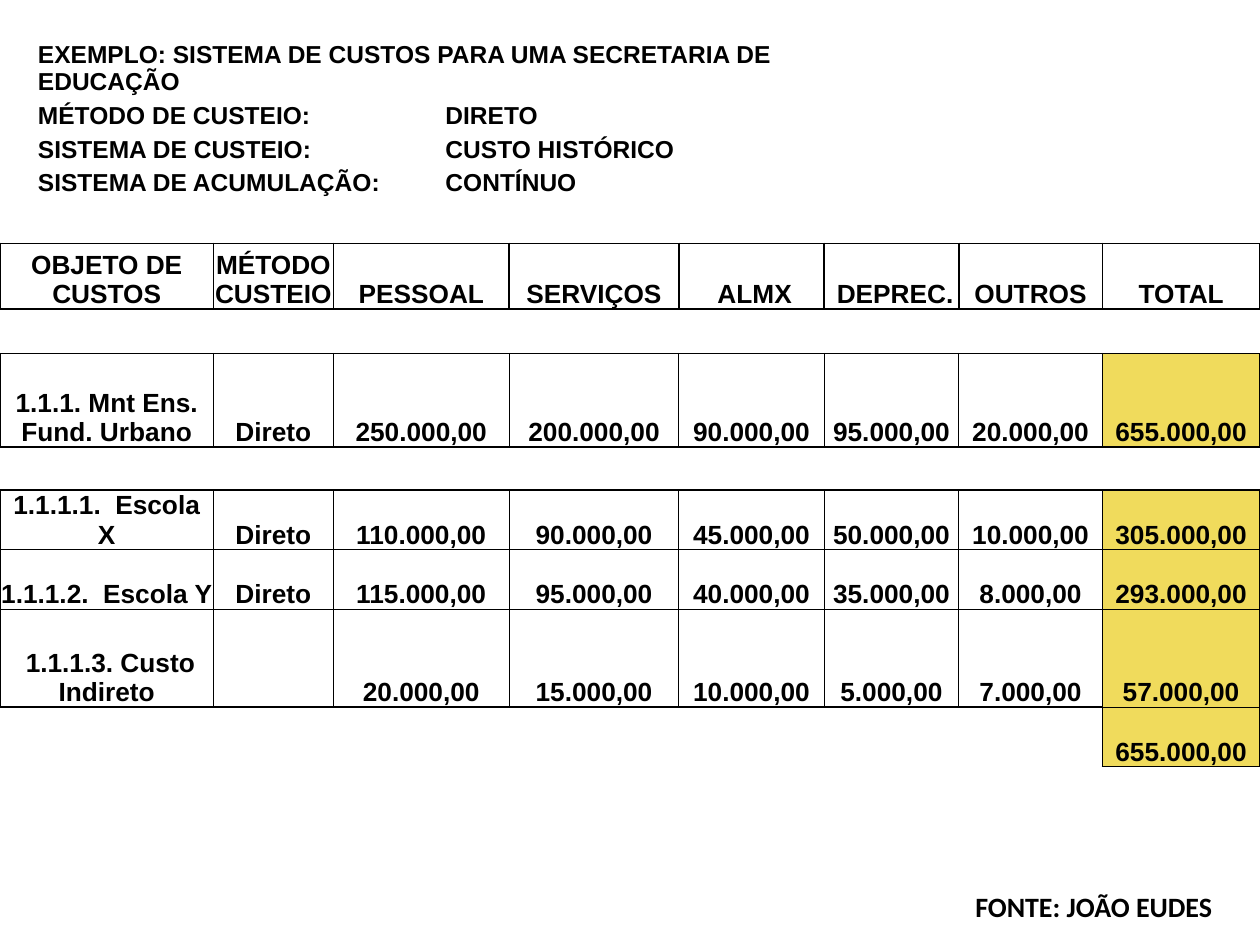
from lxml.etree import SubElement, Element
from pptx import Presentation
from pptx.dml.color import RGBColor
from pptx.enum.text import MSO_ANCHOR as Anchor, PP_ALIGN as Align
from pptx.oxml.ns import qn
from pptx.util import Pt

COLUMNS = [122, 68.5, 100.5, 97, 83, 77, 82, 90]
SIDES = {"a:lnL": (0, -1), "a:lnR": (0, 1), "a:lnT": (-1, 0), "a:lnB": (1, 0)}


def color(value):
    return RGBColor.from_string(value)


class Sheet:
    ink = "000000"
    highlight = "F0DB5C"
    cell_format = {
        "margin_left": Pt(0.7),
        "margin_right": Pt(0.7),
        "margin_top": Pt(0.7),
        "margin_bottom": 0,
        "vertical_anchor": Anchor.BOTTOM,
    }

    def __init__(self, page):
        self.page = page

    def fill_para(self, para, text, size, font="Arial", align=Align.LEFT):
        para.alignment = align
        if not text:
            SubElement(para._p, qn("a:endParaRPr"), sz=str(size * 100))
            return
        span = para.add_run()
        span.text = text
        style = {"name": font, "size": Pt(size), "bold": True}
        for key, value in style.items():
            setattr(span.font, key, value)
        span.font.color.rgb = color(self.ink)

    def border(self, cell, index, tag, weight):
        line = Element(qn(tag), w=str(Pt(weight)))
        if weight:
            fill = SubElement(line, qn("a:solidFill"))
            SubElement(fill, qn("a:srgbClr"), val=self.ink)
        else:
            SubElement(line, qn("a:noFill"))
        cell._tc.get_or_add_tcPr().insert(index, line)

    def table(self, left, top, widths, heights, rows, size=15,
              align=Align.CENTER, inner=0, total=False, merges=()):
        frame = self.page.shapes.add_table(
            len(rows), len(widths), Pt(left), Pt(top), Pt(sum(widths)), Pt(sum(heights)))
        grid = frame.table
        grid.first_row = grid.horz_banding = False
        for column, width in zip(grid.columns, widths):
            column.width = Pt(width)
        for row, height in zip(grid.rows, heights):
            row.height = Pt(height)
        boxed = {(r, c) for r, row in enumerate(rows)
                 for c, text in enumerate(row) if inner and text is not None}
        for r, row in enumerate(rows):
            for c, text in enumerate(row):
                cell = grid.cell(r, c)
                for key, value in self.cell_format.items():
                    setattr(cell, key, value)
                if total and c == len(row) - 1:
                    cell.fill.solid()
                    cell.fill.fore_color.rgb = color(self.highlight)
                else:
                    cell.fill.background()
                for index, (tag, (down, across)) in enumerate(SIDES.items()):
                    pair = {(r, c), (r + down, c + across)} & boxed
                    self.border(cell, index, tag, (0, 1, inner)[len(pair)])
                self.fill_para(cell.text_frame.paragraphs[0], text, size, align=align)
        for start, end in merges:
            grid.cell(*start).merge(grid.cell(*end))

    def label(self, left, top, width, height, text, size, font):
        box = self.page.shapes.add_textbox(Pt(left), Pt(top), Pt(width), Pt(height))
        frame = box.text_frame
        frame.word_wrap = True
        frame.vertical_anchor = Anchor.MIDDLE
        self.fill_para(frame.paragraphs[0], text, size, font, Align.CENTER)


def main():
    deck = Presentation()
    deck.slide_width, deck.slide_height = Pt(720), Pt(540)
    sheet = Sheet(deck.slides.add_slide(deck.slide_layouts[6]))

    sheet.table(0, 139, COLUMNS, [37.5], [
        ["OBJETO DE CUSTOS", "MÉTODO CUSTEIO", " PESSOAL ", " SERVIÇOS ",
         " ALMX", " DEPREC.", " OUTROS ", " TOTAL "],
    ], inner=1)
    sheet.table(0, 202, COLUMNS, [53.5], [
        ["1.1.1. Mnt Ens. Fund. Urbano", "Direto", " 250.000,00 ", " 200.000,00 ",
         " 90.000,00 ", " 95.000,00 ", " 20.000,00 ", " 655.000,00 "],
    ], inner=0.5, total=True)
    sheet.table(0, 280, COLUMNS, [34, 34, 56, 34], [
        ["1.1.1.1.  Escola X", "Direto", " 110.000,00 ", " 90.000,00 ",
         " 45.000,00 ", " 50.000,00 ", " 10.000,00 ", " 305.000,00 "],
        ["1.1.1.2.  Escola Y", "Direto", " 115.000,00 ", " 95.000,00 ",
         " 40.000,00 ", " 35.000,00 ", " 8.000,00 ", " 293.000,00 "],
        [" 1.1.1.3. Custo Indireto", "", " 20.000,00 ", " 15.000,00 ",
         " 10.000,00 ", " 5.000,00 ", " 7.000,00 ", " 57.000,00 "],
        [None] * 7 + [" 655.000,00 "],
    ], inner=0.5, total=True)
    sheet.table(21, 22, [229, 247.5, 4.5, 36], [33, 19.2, 19.2, 19.2], [
        ["EXEMPLO: SISTEMA DE CUSTOS PARA UMA SECRETARIA DE EDUCAÇÃO", None, None, None],
        ["MÉTODO DE CUSTEIO:", " DIRETO", None, None],
        ["SISTEMA DE CUSTEIO:", " CUSTO HISTÓRICO", None, None],
        ["SISTEMA DE ACUMULAÇÃO:", " CONTÍNUO", None, None],
    ], size=14, align=Align.LEFT, merges=[((0, 0), (0, 1)), ((2, 2), (2, 3))])
    sheet.label(530, 500.5, 190, 34.5, "FONTE: JOÃO EUDES", 16, "Calibri")

    deck.save("out.pptx")


if __name__ == "__main__":
    main()
